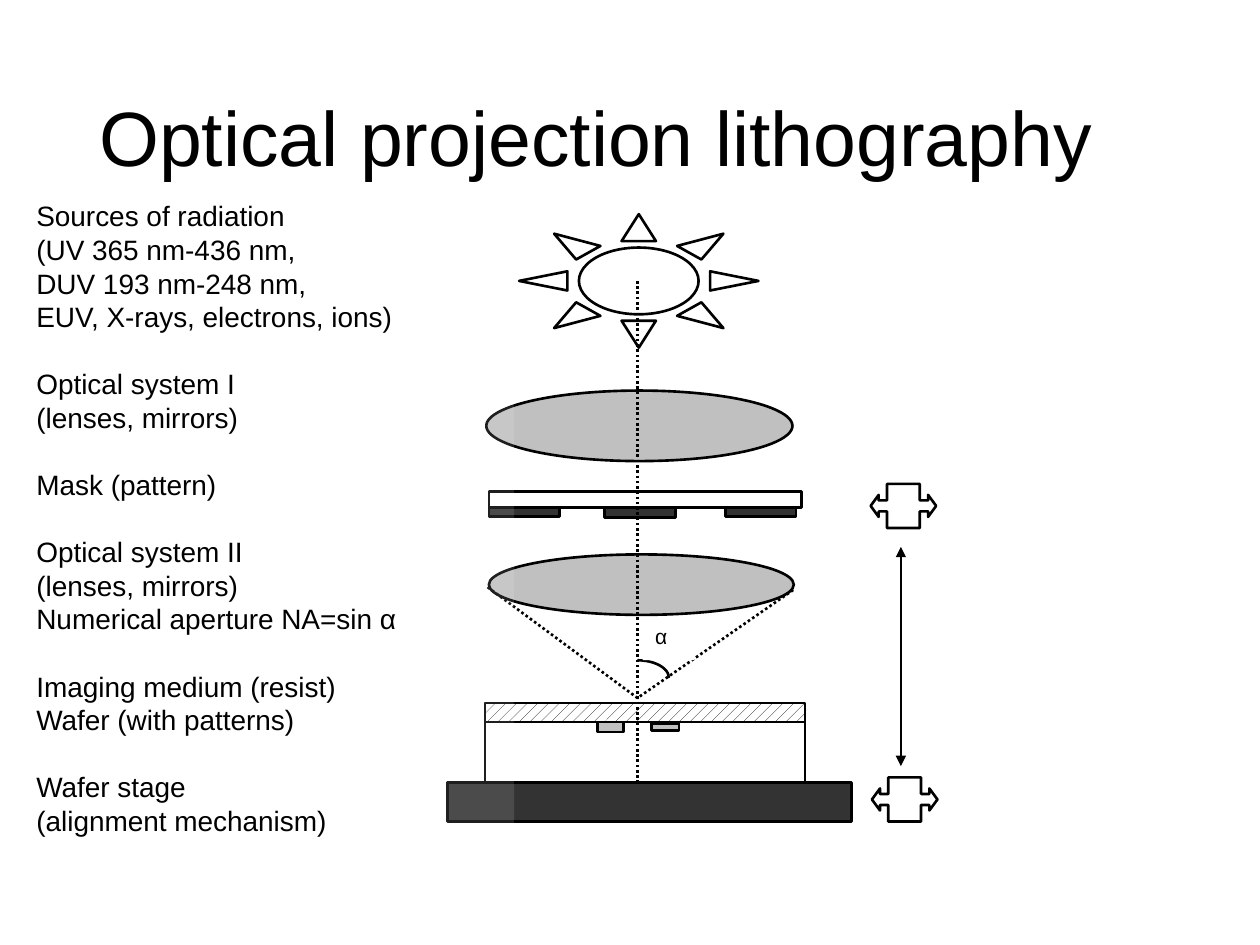
from pptx import Presentation
from pptx.dml.color import RGBColor
from pptx.enum.dml import MSO_LINE as Dash, MSO_PATTERN as Pat
from pptx.enum.shapes import MSO_CONNECTOR as Conn, MSO_SHAPE as Form
from pptx.enum.text import MSO_ANCHOR as Anchor, PP_ALIGN as Align
from pptx.oxml.ns import qn
from pptx.util import Inches, Pt
from lxml.etree import SubElement

TITLE = "Optical projection lithography"
NOTES = [
    ["Sources of radiation", "(UV 365 nm-436 nm,", "DUV 193 nm-248 nm,",
     "EUV, X-rays, electrons, ions)"],
    ["Optical system I", "(lenses, mirrors)"],
    ["Mask (pattern)"],
    ["Optical system II", "(lenses, mirrors)", "Numerical aperture NA=sin α"],
    ["Imaging medium (resist)", "Wafer (with patterns)"],
    ["Wafer stage", "(alignment mechanism)"],
]
INK, WHITE, GREY, DARK = "000000", "FFFFFF", "C0C0C0", "333333"
LEAD = 19.2
AXIS = 5.06
CONE = [(3.87, 4.66), (AXIS, 5.54), (6.3, 4.68)]
MASK_X, MASK_Y, PITCH = 3.88, 4.03, 0.96
WAFER_X, WAFER_Y, WAFER_W = 3.85, 5.73, 2.54
ARC_W, ARC_H = 0.25, 0.14
MOVE = [0.25, 0.25, 0.183, 0.5]

SUN = [(Form.SUN, (4.12, 1.7, 1.9, 1.06), WHITE, [0.25])]
MASK = [(Form.RECTANGLE, (MASK_X, MASK_Y - 0.13, 2.48, 0.13), WHITE, [])] + [
    (Form.RECTANGLE, (MASK_X + i * PITCH - dx, MASK_Y, 0.56, high), DARK, [])
    for i, (dx, high) in enumerate([(0, 0.07), (0.04, 0.08), (0.04, 0.07)])]
LENSES = [(Form.OVAL, (3.86, 3.1, 2.43, 0.56), GREY, []),
          (Form.OVAL, (3.88, 4.4, 2.42, 0.48), GREY, [])]
MOVES = [(Form.LEFT_RIGHT_ARROW_CALLOUT, (x, y, 0.52, 0.35), WHITE, MOVE)
         for x, y in [(6.92, 6.17), (6.91, 3.84)]]
WAFER = [
    (Form.RECTANGLE, (WAFER_X, WAFER_Y, WAFER_W, 0.48), WHITE, []),
    (Form.RECTANGLE, (WAFER_X, WAFER_Y - 0.15, WAFER_W, 0.15), "resist", []),
    (Form.RECTANGLE, (3.55, 6.21, 3.21, 0.31), DARK, []),
    (Form.RECTANGLE, (4.74, WAFER_Y, 0.21, 0.08), GREY, []),
    (Form.RECTANGLE, (5.17, WAFER_Y + 0.01, 0.22, 0.06), GREY, []),
]

prs = Presentation()
prs.slide_width, prs.slide_height = Inches(10), Inches(7.5)
slide = prs.slides.add_slide(prs.slide_layouts[6])
shapes = slide.shapes


def paint(hue):
    return RGBColor.from_string(hue)


def stroke(shape, dash=None):
    shape.line.color.rgb = paint(INK)
    shape.line.width = Pt(1.5)
    if dash:
        shape.line.dash_style = dash


def draw(form, box, hue, adj=()):
    shape = shapes.add_shape(form, *map(Inches, box))
    shape.shadow.inherit = False
    for i, val in enumerate(adj):
        shape.adjustments[i] = val
    if hue == "resist":
        shape.fill.patterned()
        shape.fill.pattern = Pat.PERCENT_20
        shape.fill.fore_color.rgb = paint(INK)
        shape.fill.back_color.rgb = paint(WHITE)
    elif hue:
        shape.fill.solid()
        shape.fill.fore_color.rgb = paint(hue)
    else:
        shape.fill.background()
    stroke(shape)
    return shape


def join(x, top, end, dash=None):
    line = shapes.add_connector(
        Conn.STRAIGHT, *map(Inches, (x, top, x, end)))
    stroke(line, dash)
    SubElement(line._element.spPr, qn("a:effectLst"))
    return line


def write(box, text, size, anchor=Anchor.TOP):
    label = shapes.add_textbox(*map(Inches, box))
    frame = label.text_frame
    frame.word_wrap = True
    frame.vertical_anchor = anchor
    frame.text = text
    for para in frame.paragraphs:
        para.alignment = Align.LEFT
        for run in para.runs:
            run.font.size = Pt(size)
            run.font.name = "Arial"
            run.font.color.rgb = paint(INK)
    return label


def veil(label, share=None):
    label.fill.solid()
    label.fill.fore_color.rgb = paint(WHITE)
    if share:
        tone = label._element.spPr.find(".//" + qn("a:srgbClr"))
        SubElement(tone, qn("a:alpha")).set("val", str(share * 1000))


title = write((0.69, 0.4, 8.62, 1.45), TITLE, 44, Anchor.MIDDLE)
title.text_frame.paragraphs[0].line_spacing = 0.9

for part in SUN + MASK + LENSES + MOVES:
    draw(*part)

arrow = join(7.15, 6.08, 4.34)
ends = arrow.line._get_or_add_ln()
for tag in ("a:headEnd", "a:tailEnd"):
    SubElement(ends, qn(tag)).set("type", "triangle")

for part in WAFER:
    draw(*part)

join(AXIS, 2.23, 6.23, Dash.ROUND_DOT)

start, *rest = [(Inches(x), Inches(y)) for x, y in CONE]
pen = shapes.build_freeform(*start)
pen.add_line_segments(rest, close=False)
cone = pen.convert_to_shape()
cone.shadow.inherit = False
cone.fill.background()
stroke(cone, Dash.ROUND_DOT)

draw(Form.ARC, (AXIS - ARC_W, 5.24, 2 * ARC_W, 2 * ARC_H), None)
veil(write((5.1, 4.9, 0.41, 0.34), "α", 12))

lines = [line for group in NOTES for line in group]
notes = write((0.19, 1.53, 3.89, 5.09), "\n".join(lines), 16)
veil(notes, 12)
heads = [group[0] for group in NOTES[1:]]
for para in notes.text_frame.paragraphs:
    para.line_spacing = Pt(LEAD)
    if para.text in heads:
        para.space_before = Pt(LEAD)

prs.save("out.pptx")
